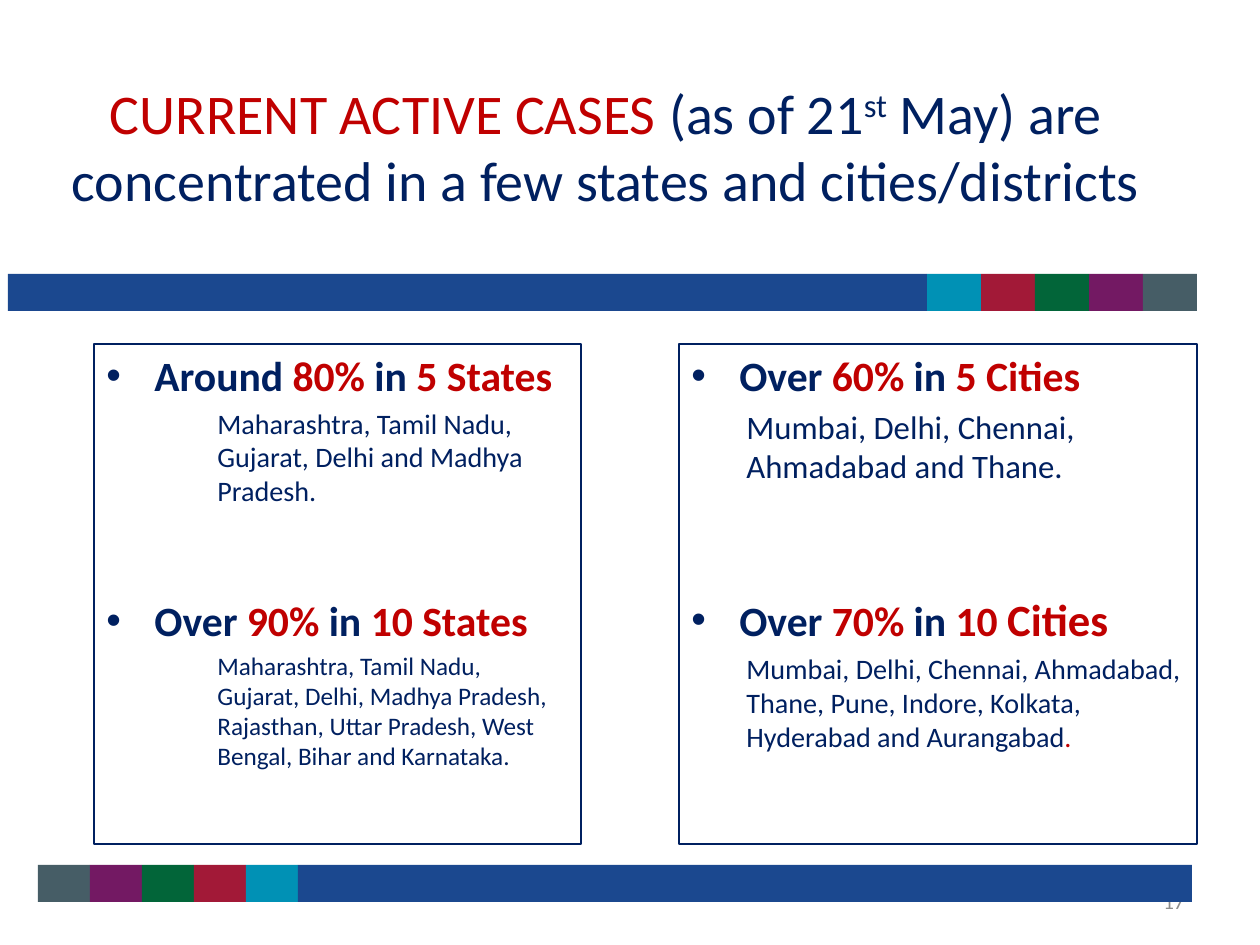
from lxml import etree
from pptx import Presentation
from pptx.dml.color import RGBColor
from pptx.enum.shapes import MSO_SHAPE
from pptx.enum.text import MSO_ANCHOR, PP_ALIGN
from pptx.oxml.ns import qn
from pptx.util import Pt

RECT = MSO_SHAPE.RECTANGLE
MIDDLE = MSO_ANCHOR.MIDDLE
CENTER, RIGHT = PP_ALIGN.CENTER, PP_ALIGN.RIGHT
FONT = "Calibri"
INK = {"navy": "002060", "red": "C00000", "white": "FFFFFF", "gray": "8C8C8C",
       "blue": "1B488F", "teal": "0091B5", "wine": "A21937",
       "green": "026539", "plum": "731963", "slate": "465D66"}

# Content: runs are (text, colour, size)
TITLE = [("CURRENT ACTIVE CASES ", "red"), ("(as of 21", "navy"), ("st", "navy"),
         (" May) are concentrated in a few states and cities/districts", "navy")]
HEAD = 23.8
# Each panel: box, body indent, then (gap before, heading runs, body runs)
PANELS = [
    ((94, 344, 487, 500), 111, [
        (0, [("Around ", "navy", HEAD), ("80%", "red", HEAD),
             (" in ", "navy", HEAD), ("5 States", "red", HEAD)],
         [("Maharashtra, Tamil Nadu, Gujarat, Delhi and Madhya Pradesh.", "navy", 16.1)]),
        (50, [("Over ", "navy", HEAD), ("90%", "red", HEAD),
              (" in ", "navy", HEAD), ("10 States", "red", HEAD)],
         [("Maharashtra, Tamil Nadu, Gujarat, Delhi, Madhya Pradesh, Rajasthan, "
           "Uttar Pradesh, West Bengal, Bihar and Karnataka.", "navy", 14.4)]),
    ]),
    ((679, 344, 518, 500), 55, [
        (0, [("Over ", "navy", HEAD), ("60% ", "red", HEAD),
             ("in ", "navy", HEAD), ("5 Cities", "red", HEAD)],
         [("Mumbai, Delhi, Chennai, Ahmadabad and Thane.", "navy", 18.7)]),
        (61, [("Over ", "navy", HEAD), ("70% ", "red", HEAD), ("in ", "navy", HEAD),
              ("10 ", "red", HEAD), ("Cities", "red", 25.5)],
         [("Mumbai, Delhi, Chennai, Ahmadabad, Thane, Pune, Indore, "
           "Kolkata, Hyderabad and Aurangabad", "navy", 16.1), (".", "red", 16.1)]),
    ]),
]
TILES = ["teal", "wine", "green", "plum", "slate"]
# Each band: top, then (left, width, colour) parts
BANDS = [
    (274, [(927 + 54 * i, 54, c) for i, c in enumerate(TILES)] + [(8, 919, "blue")]),
    (865, [(38 + 52 * i, 52, c) for i, c in enumerate(TILES[::-1])]
     + [(298, 894, "blue")]),
]
BAND_H = 37


def px(*vals):
    return [round(v * 914400 / 126) for v in vals]


def rgb(name):
    return RGBColor.from_string(INK[name])


def add_run(para, text, color, size, bold=False):
    run = para.add_run()
    run.text = text
    font = run.font
    font.name, font.size, font.bold = FONT, Pt(size), bold
    font.color.rgb = rgb(color)
    return run


def indent(para, left, hang=0, bullet=False):
    props = para._p.get_or_add_pPr()
    props.set("marL", str(px(left)[0]))
    props.set("indent", str(px(-hang)[0]))
    if bullet:
        etree.SubElement(props, qn("a:buFont")).set("typeface", "Arial")
        etree.SubElement(props, qn("a:buChar")).set("char", "•")


deck = Presentation()
deck.slide_width, deck.slide_height = px(1260, 945)
slide = deck.slides.add_slide(deck.slide_layouts[5])
shapes = slide.shapes

# Title
title = shapes.title
title.left, title.top, title.width, title.height = px(20, 37, 1172, 217)
title.fill.solid()
title.fill.fore_color.rgb = rgb("white")
title.text_frame.vertical_anchor = MIDDLE
para = title.text_frame.paragraphs[0]
para.alignment = CENTER
for text, color in TITLE:
    run = add_run(para, text, color, 32)
    if text == "st":
        run.font._element.set("baseline", "30000")

# Panels
for box, inset, items in PANELS:
    panel = shapes.add_textbox(*px(*box))
    panel.line.color.rgb = rgb("navy")
    panel.line.width = Pt(0.75)
    frame = panel.text_frame
    frame.word_wrap = True
    for i, (gap, head, body) in enumerate(items):
        para = frame.add_paragraph() if i else frame.paragraphs[0]
        para.space_before = Pt(gap)
        indent(para, 48, 48, bullet=True)
        for part in head:
            add_run(para, *part, bold=True)
        para = frame.add_paragraph()
        para.space_before = Pt(round(body[0][2] * 0.2, 1))
        indent(para, inset)
        for part in body:
            add_run(para, *part)

# Page number, partly under the lower band
page = shapes.add_textbox(*px(903, 876, 294, 50))
page.text_frame.word_wrap = True
page.text_frame.vertical_anchor = MIDDLE
para = page.text_frame.paragraphs[0]
para.alignment = RIGHT
add_run(para, "17", "gray", 12)

# Colour bands
for top, parts in BANDS:
    group = shapes.add_group_shape().shapes
    for left, width, color in parts:
        tile = group.add_shape(RECT, *px(left, top, width, BAND_H))
        tile.shadow.inherit = False
        tile.fill.solid()
        tile.fill.fore_color.rgb = rgb(color)
        tile.line.fill.background()

deck.save("out.pptx")
